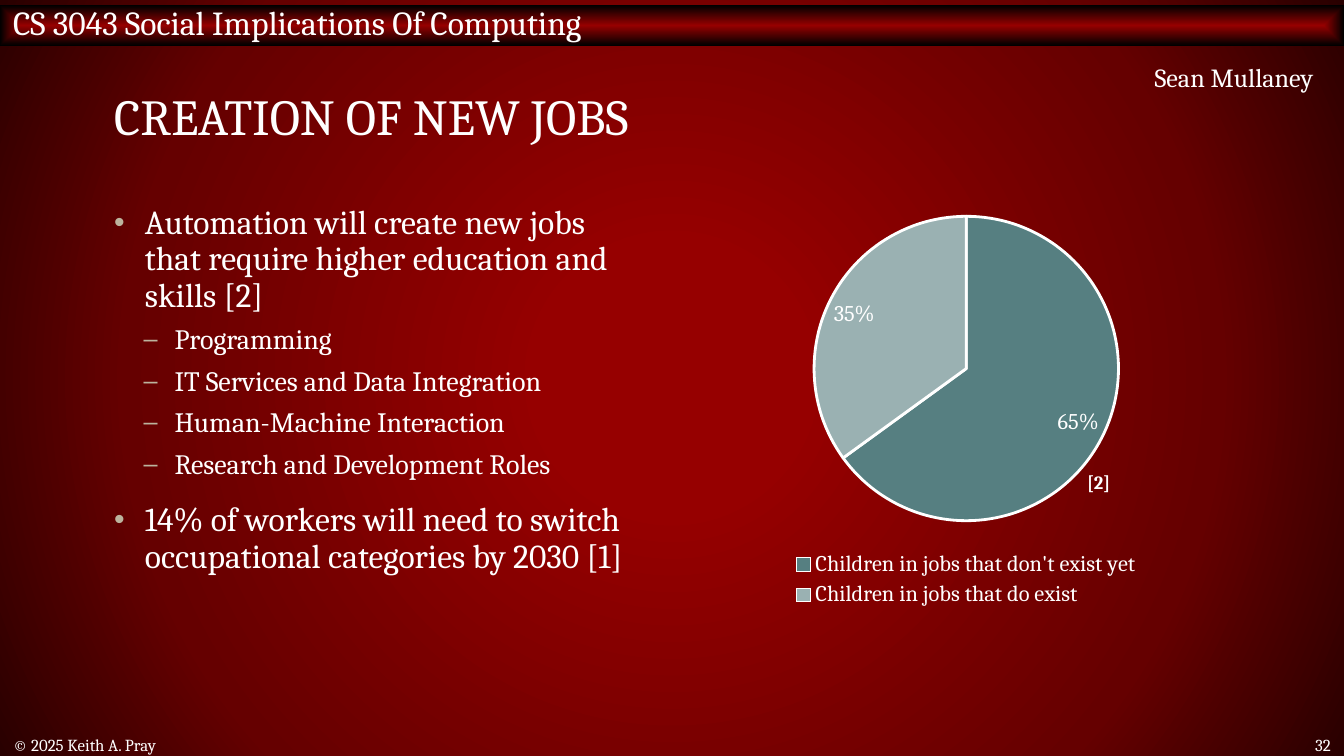
from dataclasses import dataclass, field

from lxml import etree
from pptx import Presentation
from pptx import util as u
from pptx.chart.data import CategoryChartData
from pptx.dml.color import RGBColor
from pptx.enum import chart as ch, shapes, text
from pptx.oxml import parse_xml
from pptx.oxml.ns import nsdecls, qn


@dataclass(frozen=True)
class Theme:
    face: str = "Cambria"
    ink: str = "FFFFFF"
    mark: str = "BCB49E"
    slices: tuple = ("567F81", "9AB1B2")
    back: tuple = ((17, "960000"), (71, "650000"), (100, "290000"))
    bar: tuple = ((0, "960000"), (100, "000000"))
    title: int = 27
    head: int = 18
    sub: int = 15
    name: int = 14
    label: int = 12
    cite: int = 10
    foot: int = 9


T = Theme()
WIDE = u.Inches(10)
HIGH = WIDE * 9 // 16
MID = text.MSO_ANCHOR.MIDDLE
RIGHT = text.PP_ALIGN.RIGHT


@dataclass
class Label:
    words: str
    box: tuple
    size: int
    para: dict = field(default_factory=dict)
    frame: dict = field(default_factory=dict)
    bold: bool = False


@dataclass
class Point:
    words: str
    level: int = 0


LABELS = [
    Label("© 2025 Keith A. Pray", (0, 5.46, 6.08, 0.16), T.foot,
          frame={"vertical_anchor": MID}),
    Label("32", (9.32, 5.46, 0.68, 0.16), T.foot,
          {"alignment": RIGHT}, {"vertical_anchor": MID}),
    Label("Sean Mullaney", (7.49, 0.41, 2.38, 0.34), T.name,
          {"alignment": RIGHT}),
    Label("[2]", (7.99, 3.47, 0.39, 0.25), T.cite,
          {"line_spacing": 0.9}, {"word_wrap": False}, True),
]

POINTS = [
    Point("Automation will create new jobs that require higher education "
          "and skills [2]"),
    Point("Programming", 1),
    Point("IT Services and Data Integration", 1),
    Point("Human-Machine Interaction", 1),
    Point("Research and Development Roles", 1),
    Point("14% of workers will need to switch occupational categories "
          "by 2030 [1]"),
]


def apply(item, form: dict) -> None:
    for key, value in form.items():
        setattr(item, key, value)


def place(box: tuple) -> list:
    return [u.Inches(n) for n in box]


def style(font, size: int, bold: bool = False) -> None:
    apply(font, {"name": T.face, "size": u.Pt(size), "bold": bold})
    font.color.rgb = RGBColor.from_string(T.ink)


def write(para, words: str, size: int, bold: bool = False) -> None:
    run = para.add_run()
    run.text = words
    style(run.font, size, bold)


def shade(fill, root, stops: tuple, kind: str) -> None:
    """Give a fill a gradient that spreads from its centre."""
    fill.gradient()
    old = root.find(".//" + qn("a:gradFill"))
    marks = "".join(
        f'<a:gs pos="{pos * 1000}"><a:srgbClr val="{tint}"/></a:gs>'
        for pos, tint in stops)
    new = parse_xml(
        f'<a:gradFill {nsdecls("a")} rotWithShape="1"><a:gsLst>{marks}</a:gsLst>'
        f'<a:path path="{kind}"><a:fillToRect l="50000" t="50000" '
        f'r="50000" b="50000"/></a:path></a:gradFill>')
    old.getparent().replace(old, new)


def bullet(para, level: int) -> None:
    props = para._p.get_or_add_pPr()
    props.set("marL", str(u.Inches((0.23, 0.45)[level])))
    props.set("indent", str(-u.Inches(0.23)))
    tint = etree.SubElement(props, qn("a:buClr"))
    etree.SubElement(tint, qn("a:srgbClr")).set("val", T.mark)
    etree.SubElement(props, qn("a:buSzPct")).set("val", "90000")
    etree.SubElement(props, qn("a:buFont")).set("typeface", "Arial")
    etree.SubElement(props, qn("a:buChar")).set("char", "•–"[level])


def draw_bar(slide) -> None:
    bar = slide.shapes.add_shape(shapes.MSO_SHAPE.RECTANGLE,
                                 *place((0, 0.04, 10, 0.3)))
    bar.shadow.inherit = False
    bar.line.fill.background()
    shade(bar.fill, bar._element, T.bar, "shape")
    frame = bar.text_frame
    apply(frame, {"vertical_anchor": MID, "margin_top": 0, "word_wrap": True})
    para = frame.paragraphs[0]
    para.alignment = text.PP_ALIGN.LEFT
    write(para, "CS 3043 Social Implications Of Computing", T.head)


def draw_title(slide) -> None:
    title = slide.shapes.title
    apply(title, dict(zip(("left", "top", "width", "height"),
                          place((0.75, 0.4, 8.5, 1)))))
    apply(title.text_frame, {"vertical_anchor": MID, "word_wrap": True,
                             "auto_size": text.MSO_AUTO_SIZE.NONE})
    para = title.text_frame.paragraphs[0]
    apply(para, {"alignment": text.PP_ALIGN.LEFT, "line_spacing": 0.8})
    write(para, "CREATION OF NEW JOBS", T.title)


def draw_points(slide, points: list[Point]) -> None:
    frame = slide.shapes.add_textbox(*place((0.75, 1.48, 4.08, 3.67))).text_frame
    frame.word_wrap = True
    for i, point in enumerate(points):
        para = frame.add_paragraph() if i else frame.paragraphs[0]
        bullet(para, point.level)
        gap = (12, 6)[point.level] if i else 0
        apply(para, {"level": point.level, "line_spacing": 0.9,
                     "space_before": u.Pt(gap)})
        write(para, point.words, (T.head, T.sub)[point.level])


def draw_label(slide, label: Label) -> None:
    frame = slide.shapes.add_textbox(*place(label.box)).text_frame
    apply(frame, {"word_wrap": True} | label.frame)
    para = frame.paragraphs[0]
    apply(para, label.para)
    write(para, label.words, label.size, label.bold)


def layout(parent, inner: bool, box: tuple) -> None:
    """Fix the place of a chart part as shares of the chart area."""
    target = '<c:layoutTarget val="inner"/>' if inner else ""
    modes = '<c:xMode val="edge"/><c:yMode val="edge"/>'
    sides = "".join(f'<c:{k} val="{v}"/>' for k, v in zip("xywh", box))
    new = parse_xml(f'<c:layout {nsdecls("c")}><c:manualLayout>{target}{modes}'
                    f'{sides}</c:manualLayout></c:layout>')
    old = parent.find(qn("c:layout"))
    if old is not None:
        parent.remove(old)
    spot = parent.find(qn("c:legendPos"))
    parent.insert(0 if spot is None else parent.index(spot) + 1, new)


def draw_pie(slide) -> None:
    data = CategoryChartData(number_format="0%")
    data.categories = ["Children in jobs that don't exist yet",
                       "Children in jobs that do exist"]
    data.add_series("Series 1", (0.65, 0.35))
    chart = slide.shapes.add_chart(ch.XL_CHART_TYPE.PIE,
                                   *place((4.83, 1.48, 4.72, 3.08)), data).chart
    apply(chart, {"has_title": False, "has_legend": True})
    style(chart.font, T.cite)
    apply(chart.legend, {"position": ch.XL_LEGEND_POSITION.BOTTOM,
                         "include_in_layout": False})
    style(chart.legend.font, T.label)
    plot = chart.plots[0]
    plot.vary_by_categories = True
    # Slices and their values
    for i, tint in enumerate(T.slices):
        form = plot.series[0].points[i].format
        form.fill.solid()
        form.fill.fore_color.rgb = RGBColor.from_string(tint)
        form.line.color.rgb = RGBColor.from_string(T.ink)
        form.line.width = u.Pt(1.5)
    tags = plot.series[0].data_labels
    apply(tags, {"show_value": True, "show_percentage": False,
                 "number_format": "0%", "number_format_is_linked": False,
                 "position": ch.XL_LABEL_POSITION.BEST_FIT})
    style(tags.font, T.label)
    area = chart._chartSpace.find(".//" + qn("c:plotArea"))
    layout(area, True, (0.26, 0.04, 0.48, 0.74))
    layout(chart.legend._element, False, (0.22, 0.84, 0.56, 0.16))


def main() -> None:
    deck = Presentation()
    apply(deck, {"slide_width": WIDE, "slide_height": HIGH})
    slide = deck.slides.add_slide(deck.slide_layouts[5])
    # Backdrop and header
    shade(slide.background.fill, slide._element, T.back, "circle")
    draw_bar(slide)
    draw_title(slide)
    # Content
    draw_points(slide, POINTS)
    draw_pie(slide)
    # Name, footer and citation
    for label in LABELS:
        draw_label(slide, label)
    deck.save("out.pptx")


if __name__ == "__main__":
    main()
